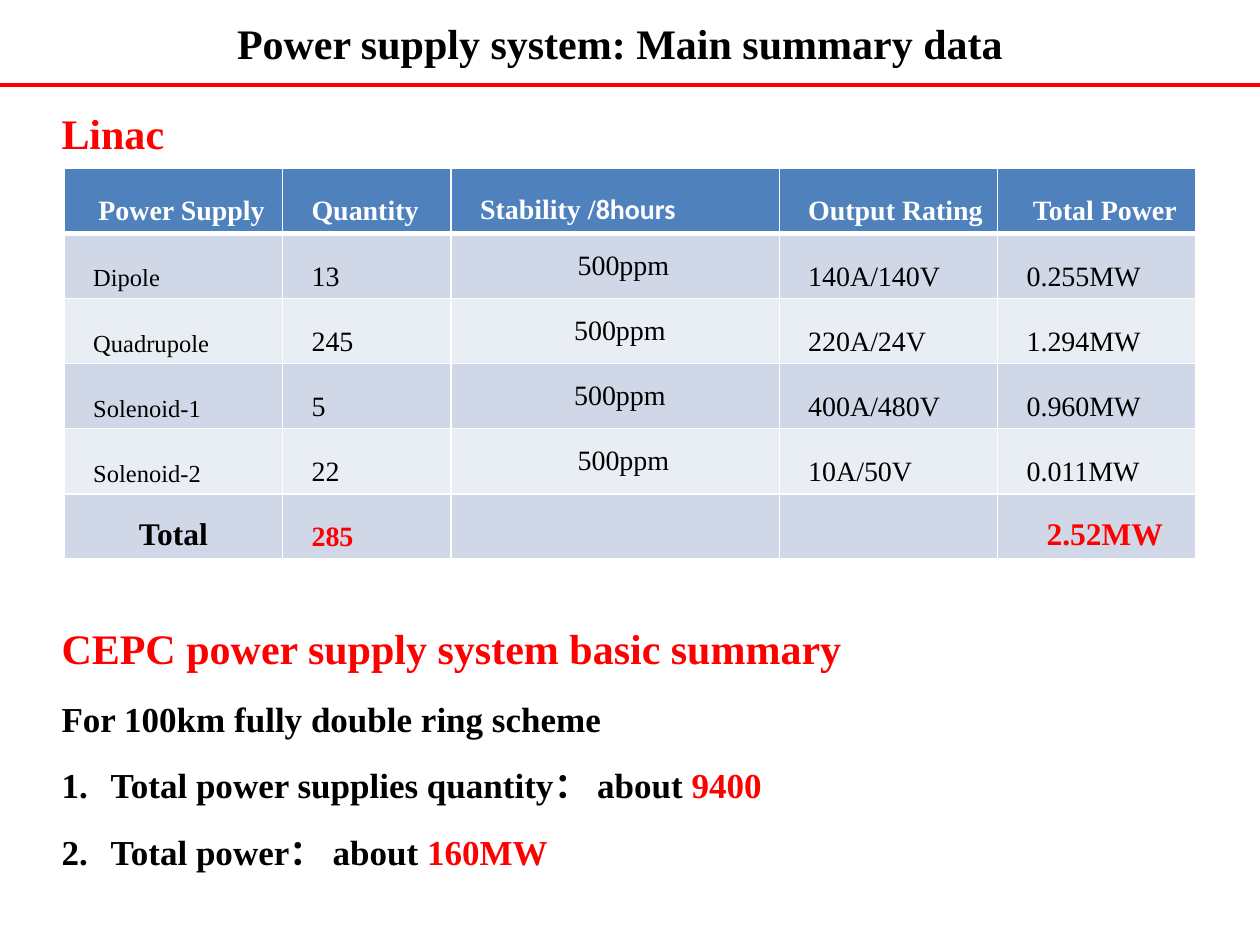
from lxml.etree import SubElement
from pptx import Presentation
from pptx.dml.color import RGBColor
from pptx.enum.shapes import MSO_CONNECTOR
from pptx.enum.text import MSO_ANCHOR, PP_ALIGN
from pptx.oxml.ns import qn
from pptx.util import Inches, Pt

WIDTH, HEIGHT = 10, 7.5
FONT = "Times New Roman"
BLACK, WHITE, RED = "000000", "FFFFFF", "FF0000"
HEADER_FILL, BAND_FILLS = "4F81BD", ("D0D8E8", "E9EDF4")
COLUMN_SHARES = (0.193, 0.149, 0.29, 0.193, 0.175)
STABILITY_COLUMN = 2
ROWS = (
    ("Power Supply", "Quantity", "Stability /", "Output Rating", "Total Power"),
    ("Dipole", "13", "500ppm", "140A/140V", "0.255MW"),
    ("Quadrupole", "245", "500ppm ", "220A/24V", "1.294MW"),
    ("Solenoid-1", "5", "500ppm ", "400A/480V", "0.960MW"),
    ("Solenoid-2", "22", "500ppm", "10A/50V", "0.011MW"),
    ("Total", "285", "", "", "2.52MW"),
)
SUMMARY = (
    (("For 100km fully double ring scheme", BLACK),),
    (("Total power supplies quantity： about ", BLACK), ("9400", RED)),
    (("Total power： about ", BLACK), ("160MW", RED)),
)


def color(value):
    return RGBColor.from_string(value)


def share_box(left, top, width, height):
    return (Inches(WIDTH * left), Inches(HEIGHT * top),
            Inches(WIDTH * width), Inches(HEIGHT * height))


def format_run(run, size, fill, bold=True, name=FONT):
    run.font.name, run.font.size, run.font.bold = name, Pt(size), bold
    run.font.color.rgb = color(fill)


def add_runs(paragraph, parts, size):
    for text, fill in parts:
        run = paragraph.add_run()
        run.text = text
        format_run(run, size, fill)


def add_text_frame(slide, box):
    text_frame = slide.shapes.add_textbox(*box).text_frame
    text_frame.word_wrap = True
    return text_frame


def add_title(slide, box):
    text_frame = add_text_frame(slide, box)
    text_frame.vertical_anchor = MSO_ANCHOR.MIDDLE
    paragraph = text_frame.paragraphs[0]
    paragraph.alignment = PP_ALIGN.CENTER
    add_runs(paragraph, [("Power supply system: Main summary data", BLACK)], 24)


def add_rule(slide, box):
    left, top, width, height = box
    rule = slide.shapes.add_connector(
        MSO_CONNECTOR.STRAIGHT, left, top, left + width, top + height)
    rule.line.color.rgb = color(RED)
    rule.line.width = Pt(2.25)
    SubElement(rule._element.spPr, qn("a:effectLst"))


def add_heading(slide, box, text):
    text_frame = add_text_frame(slide, box)
    paragraph = text_frame.paragraphs[0]
    paragraph.line_spacing, paragraph.space_after = Pt(30), Pt(6)
    add_runs(paragraph, [(text, RED)], 24)
    return text_frame


def add_summary(slide, box):
    text_frame = add_heading(slide, box, "CEPC power supply system basic summary")
    for index, parts in enumerate(SUMMARY):
        paragraph = text_frame.add_paragraph()
        if index:
            properties = paragraph._p.get_or_add_pPr()
            properties.set("marL", str(Inches(0.39)))
            properties.set("indent", str(-Inches(0.39)))
            SubElement(properties, qn("a:buAutoNum"), type="arabicPeriod")
        paragraph.line_spacing = Pt(26)
        paragraph.space_before = paragraph.space_after = Pt(6)
        add_runs(paragraph, parts, 20)


def set_borders(cell, row):
    properties = cell._tc.get_or_add_tcPr()
    widths = {"L": 1, "R": 1, "T": 3 if row == 1 else 1, "B": 3 if row == 0 else 1}
    for side, width in widths.items():
        line = SubElement(properties, qn(f"a:ln{side}"), w=str(Pt(width)))
        fill = SubElement(line, qn("a:solidFill"))
        SubElement(fill, qn("a:srgbClr"), val=WHITE)


def cell_style(row, column):
    if row == 0:
        return 16, WHITE, True, column in (0, 4)
    if row == len(ROWS) - 1:
        outer = column in (0, 4)
        return 18 if outer else 16, RED if column else BLACK, True, outer
    return 16 if column else 14, BLACK, False, column == STABILITY_COLUMN


def fill_cell(cell, text, row, column):
    set_borders(cell, row)
    cell.fill.solid()
    cell.fill.fore_color.rgb = color(
        BAND_FILLS[(row - 1) % 2] if row else HEADER_FILL)
    cell.vertical_anchor = MSO_ANCHOR.MIDDLE
    if not text:
        return
    size, font_color, bold, centered = cell_style(row, column)
    paragraph = cell.text_frame.paragraphs[0]
    paragraph.text = text
    paragraph.alignment = PP_ALIGN.CENTER if centered else PP_ALIGN.LEFT
    if text != "Total":
        paragraph._p.get_or_add_pPr().set("indent", str(Inches(0.13)))
    if row == 0 or column != STABILITY_COLUMN:
        paragraph.line_spacing = Pt(30)
    format_run(paragraph.runs[0], size, font_color, bold)
    if row == 0 and column == STABILITY_COLUMN:
        hours = paragraph.add_run()
        hours.text = "8hours"
        format_run(hours, size, font_color, bold, "Calibri")


def add_supply_table(slide, box):
    table = slide.shapes.add_table(len(ROWS), len(COLUMN_SHARES), *box).table
    for column, share in zip(table.columns, COLUMN_SHARES):
        column.width = int(box[2] * share)
    for row, texts in enumerate(ROWS):
        for column, text in enumerate(texts):
            fill_cell(table.cell(row, column), text, row, column)


def main():
    presentation = Presentation()
    presentation.slide_width, presentation.slide_height = Inches(WIDTH), Inches(HEIGHT)
    slide = presentation.slides.add_slide(presentation.slide_layouts[6])
    left, width = 0.039, 0.906
    add_title(slide, share_box(left, 0, width, 0.09))
    add_heading(slide, share_box(left, 0.105, width, 0.07), "Linac")
    add_summary(slide, share_box(left, 0.65, width, 0.24))
    add_rule(slide, share_box(0, 0.09, 1, 0))
    add_supply_table(slide, share_box(0.051, 0.178, 0.898, 0.413))
    presentation.save("out.pptx")


if __name__ == "__main__":
    main()
